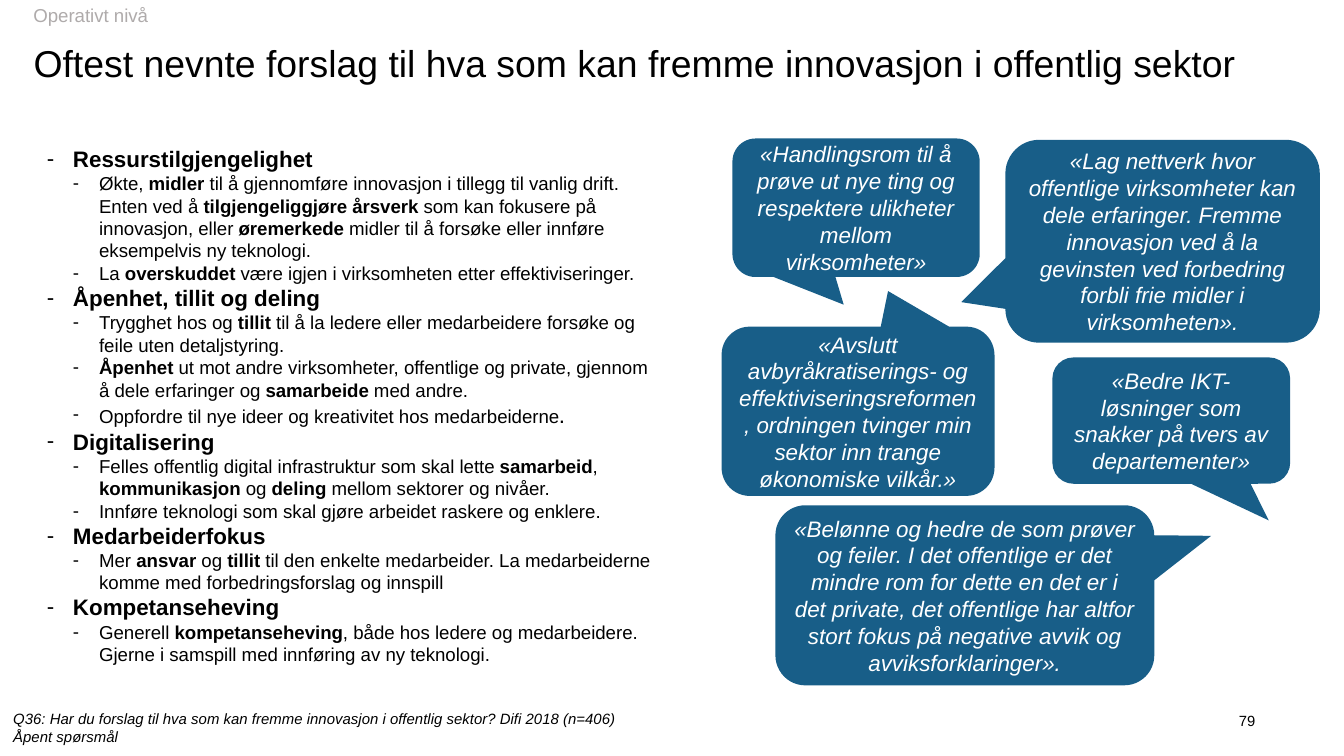
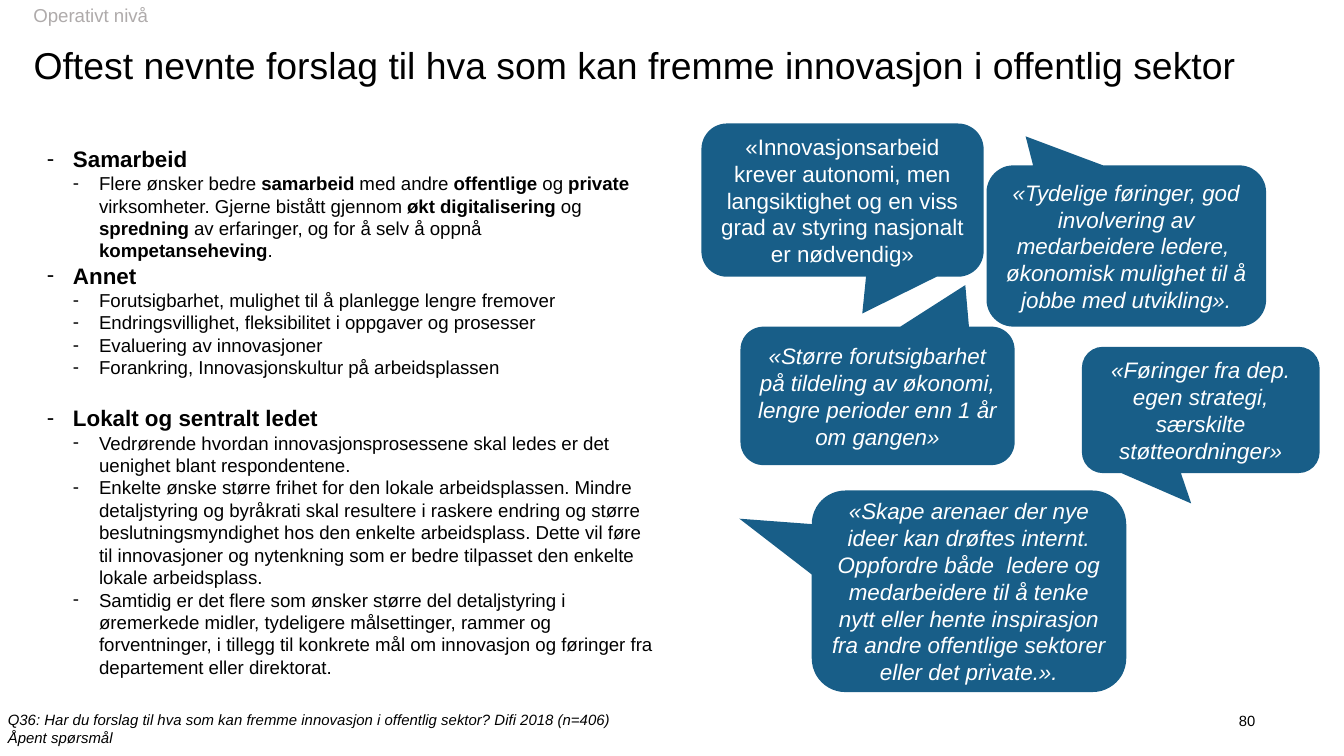
from lxml import etree
from pptx import Presentation
from pptx import util as u
from pptx.dml import color
from pptx.enum import shapes, text
from pptx.oxml import ns

THEME = {
    "font": "Arial",
    "ink": color.RGBColor.from_string("000000"),
    "muted": color.RGBColor.from_string("AFABAB"),
    "callout": color.RGBColor.from_string("185E88"),
    "white": color.RGBColor.from_string("FFFFFF"),
    "title": u.Pt(20),
    "heading": u.Pt(12),
    "detail": u.Pt(10),
    "quote": u.Pt(12),
    "note": u.Pt(8),
    "page": u.Pt(7.9),
}

SECTION = "Operativt nivå"
TITLE = "Oftest nevnte forslag til hva som kan fremme innovasjon i offentlig sektor"
NOTE = [
    "Q36: Har du forslag til hva som kan fremme innovasjon i offentlig sektor? Difi 2018 (n=406)",
    "Åpent spørsmål",
]
LIST_INDENT = 14

SLIDES = [
    {
        "page": "79",
        "title_at": (18, 21.6, 696.2, 24.5),
        "body_at": (18, 74.2, 342, 293.8),
        "note_at": (0, 376.6, 347.8, 26.6),
        "topics": [
            ("Ressurstilgjengelighet", 0, [
                "Økte, **midler** til å gjennomføre innovasjon i tillegg til vanlig drift. Enten ved å "
                "**tilgjengeliggjøre årsverk** som kan fokusere på innovasjon, eller **øremerkede** "
                "midler til å forsøke eller innføre eksempelvis ny teknologi.",
                "La **overskuddet** være igjen i virksomheten etter effektiviseringer.",
            ]),
            ("Åpenhet, tillit og deling", 0, [
                "Trygghet hos og **tillit** til å la ledere eller medarbeidere forsøke og feile uten "
                "detaljstyring.",
                "**Åpenhet** ut mot andre virksomheter, offentlige og private, gjennom å dele "
                "erfaringer og **samarbeide** med andre.",
                "Oppfordre til nye ideer og kreativitet hos medarbeiderne|.",
            ]),
            ("Digitalisering", 0, [
                "Felles offentlig digital infrastruktur som skal lette **samarbeid**, "
                "**kommunikasjon** og **deling** mellom sektorer og nivåer.",
                "Innføre teknologi som skal gjøre arbeidet raskere og enklere.",
            ]),
            ("Medarbeiderfokus", 0, [
                "Mer **ansvar** og **tillit** til den enkelte medarbeider. La medarbeiderne komme med "
                "forbedringsforslag og innspill",
            ]),
            ("Kompetanseheving", 0, [
                "Generell **kompetanseheving**, både hos ledere og medarbeidere. Gjerne i samspill med "
                "innføring av ny teknologi.",
            ]),
        ],
        "quotes": [
            ((563.8, 191.5, 127.4, 67.7), (0.41, 0.79), True,
             "«Bedre IKT-løsninger som snakker på tvers av departementer»"),
            ((386.6, 175, 146.2, 90.7), (0.11, -0.71), True,
             "«Avslutt avbyråkratiserings- og effektiviseringsreformen, ordningen tvinger min sektor "
             "inn trange økonomiske vilkår.»"),
            ((415.4, 270.7, 203, 96.5), (0.65, -0.33), True,
             "«Belønne og hedre de som prøver og feiler. I det offentlige er det mindre rom for dette "
             "en det er i det private, det offentlige har altfor stort fokus på negative avvik og "
             "avviksforklaringer»."),
            ((392.4, 74.2, 132.5, 74.2), (-0.05, 0.7), True,
             "«Handlingsrom til å prøve ut nye ting og respektere ulikheter mellom virksomheter»"),
            ((538.6, 74.9, 168.5, 108.7), (-0.64, 0.3), True,
             "«Lag nettverk hvor offentlige virksomheter kan dele erfaringer. Fremme innovasjon ved å "
             "la gevinsten ved forbedring forbli frie midler i virksomheten»."),
        ],
    },
    {
        "page": "80",
        "title_at": (18, 18, 696.2, 28.8),
        "body_at": (18, 74.2, 342, 285.1),
        "note_at": (-2.9, 377.3, 347.8, 26.6),
        "topics": [
            ("Samarbeid", 0, [
                "Flere ønsker bedre **samarbeid** med andre **offentlige** og **private** virksomheter. "
                "Gjerne bistått gjennom **økt digitalisering** og **spredning** av erfaringer, og for å "
                "selv å oppnå **kompetanseheving**.",
            ]),
            ("Annet", 0, [
                "Forutsigbarhet, mulighet til å planlegge lengre fremover",
                "Endringsvillighet, fleksibilitet i oppgaver og prosesser",
                "Evaluering av innovasjoner",
                "Forankring, Innovasjonskultur på arbeidsplassen",
            ]),
            ("Lokalt og sentralt ledet", 14, [
                "Vedrørende hvordan innovasjonsprosessene skal ledes er det uenighet blant "
                "respondentene.",
                "Enkelte ønske større frihet for den lokale arbeidsplassen. Mindre detaljstyring og "
                "byråkrati skal resultere i raskere endring og større beslutningsmyndighet hos den "
                "enkelte arbeidsplass. Dette vil føre til innovasjoner og nytenkning som er bedre "
                "tilpasset den enkelte lokale arbeidsplass.",
                "Samtidig er det flere som ønsker større del detaljstyring i øremerkede midler, "
                "tydeligere målsettinger, rammer og forventninger, i tillegg til konkrete mål om "
                "innovasjon og føringer fra departement eller direktorat.",
            ]),
        ],
        "quotes": [
            ((579.6, 185.8, 127.4, 67.7), (-0.04, 0.74), True,
             "«Føringer fra dep. egen strategi, særskilte støtteordninger»"),
            ((396.7, 175, 146.9, 74.2), (0.32, -0.8), True,
             "«Større forutsigbarhet på tildeling av økonomi, lengre perioder enn 1 år om gangen»"),
            ((434.9, 262.8, 168.5, 108), (-0.73, -0.36), True,
             "«Skape arenaer der nye ideer kan drøftes internt. Oppfordre både  ledere og "
             "medarbeidere til å tenke nytt eller hente inspirasjon fra andre offentlige sektorer "
             "eller det private.»."),
            ((375.8, 66.2, 151.2, 82.1), (0.07, 0.74), False,
             "«Innovasjonsarbeid krever autonomi, men langsiktighet og en viss grad av styring "
             "nasjonalt er nødvendig»"),
            ((528.5, 88.6, 149.8, 86.4), (-0.36, -0.68), True,
             "«Tydelige føringer, god involvering av medarbeidere ledere,  økonomisk mulighet til å "
             "jobbe med utvikling»."),
        ],
    },
]


def set_frame(sp, inset=(7.2, 3.6), anchor=text.MSO_ANCHOR.TOP, wrap=True):
    tf = sp.text_frame
    x, y = [u.Pt(v) for v in inset]
    frame = {"word_wrap": wrap, "vertical_anchor": anchor, "margin_left": x,
             "margin_right": x, "margin_top": y, "margin_bottom": y}
    for name, value in frame.items():
        setattr(tf, name, value)
    return tf


def add_run(p, words, size, ink="ink", **style):
    r = p.add_run()
    r.text = words
    r.font.color.rgb = THEME[ink]
    for name, value in {"name": THEME["font"], "size": THEME[size], **style}.items():
        setattr(r.font, name, value)


prs = Presentation()
prs.slide_width, prs.slide_height = u.Pt(720), u.Pt(405)

for content in SLIDES:
    s = prs.slides.add_slide(prs.slide_layouts[6])

    sp = s.shapes.add_textbox(*map(u.Pt, content["title_at"]))
    p = set_frame(sp, (0, 0), text.MSO_ANCHOR.BOTTOM).paragraphs[0]
    p.line_spacing = 0.9
    add_run(p, TITLE, "title")

    sp = s.shapes.add_textbox(*map(u.Pt, content["body_at"]))
    tf = set_frame(sp)
    lines = []
    for heading, gap, details in content["topics"]:
        lines.append((1, gap, f"**{heading}**"))
        lines += [(2, 0, detail) for detail in details]
    for i, (level, gap, line) in enumerate(lines):
        p = tf.add_paragraph() if i else tf.paragraphs[0]
        p.level = level
        pPr = p._p.get_or_add_pPr()
        pPr.set("marL", str(u.Pt(LIST_INDENT * level)))
        pPr.set("indent", str(u.Pt(-LIST_INDENT)))
        etree.SubElement(pPr, ns.qn("a:buFont")).set("typeface", THEME["font"])
        etree.SubElement(pPr, ns.qn("a:buChar")).set("char", "-")
        if gap:
            p.space_before = u.Pt(gap)
        main, _, ending = line.partition("|")
        for j, words in enumerate(main.split("**")):
            if words:
                add_run(p, words, "heading" if level == 1 else "detail", bold=j % 2 == 1)
        if ending:
            add_run(p, ending, "heading", bold=False)

    for box, tail, italic, quote in content["quotes"]:
        sp = s.shapes.add_shape(shapes.MSO_SHAPE.ROUNDED_RECTANGULAR_CALLOUT, *map(u.Pt, box))
        sp.adjustments[0], sp.adjustments[1] = tail
        sp.shadow.inherit = False
        sp.fill.solid()
        sp.fill.fore_color.rgb = THEME["callout"]
        sp.line.fill.background()
        p = set_frame(sp, (5, 2.5), text.MSO_ANCHOR.MIDDLE).paragraphs[0]
        p.alignment = text.PP_ALIGN.CENTER
        add_run(p, quote, "quote", "white", italic=italic)

    sp = s.shapes.add_textbox(*map(u.Pt, (654.5, 380.9, 18, 10.8)))
    p = set_frame(sp, (0, 0), text.MSO_ANCHOR.MIDDLE).paragraphs[0]
    p.alignment = text.PP_ALIGN.RIGHT
    add_run(p, content["page"], "page")

    sp = s.shapes.add_textbox(*map(u.Pt, content["note_at"]))
    tf = set_frame(sp, wrap=False)
    tf.auto_size = text.MSO_AUTO_SIZE.SHAPE_TO_FIT_TEXT
    for i, line in enumerate(NOTE):
        p = tf.add_paragraph() if i else tf.paragraphs[0]
        add_run(p, line, "note", italic=True)

    sp = s.shapes.add_textbox(*map(u.Pt, (10.8, 0, 89.3, 18.7)))
    p = set_frame(sp).paragraphs[0]
    p.line_spacing = 0.9
    add_run(p, SECTION, "detail", "muted")

prs.save("out.pptx")
